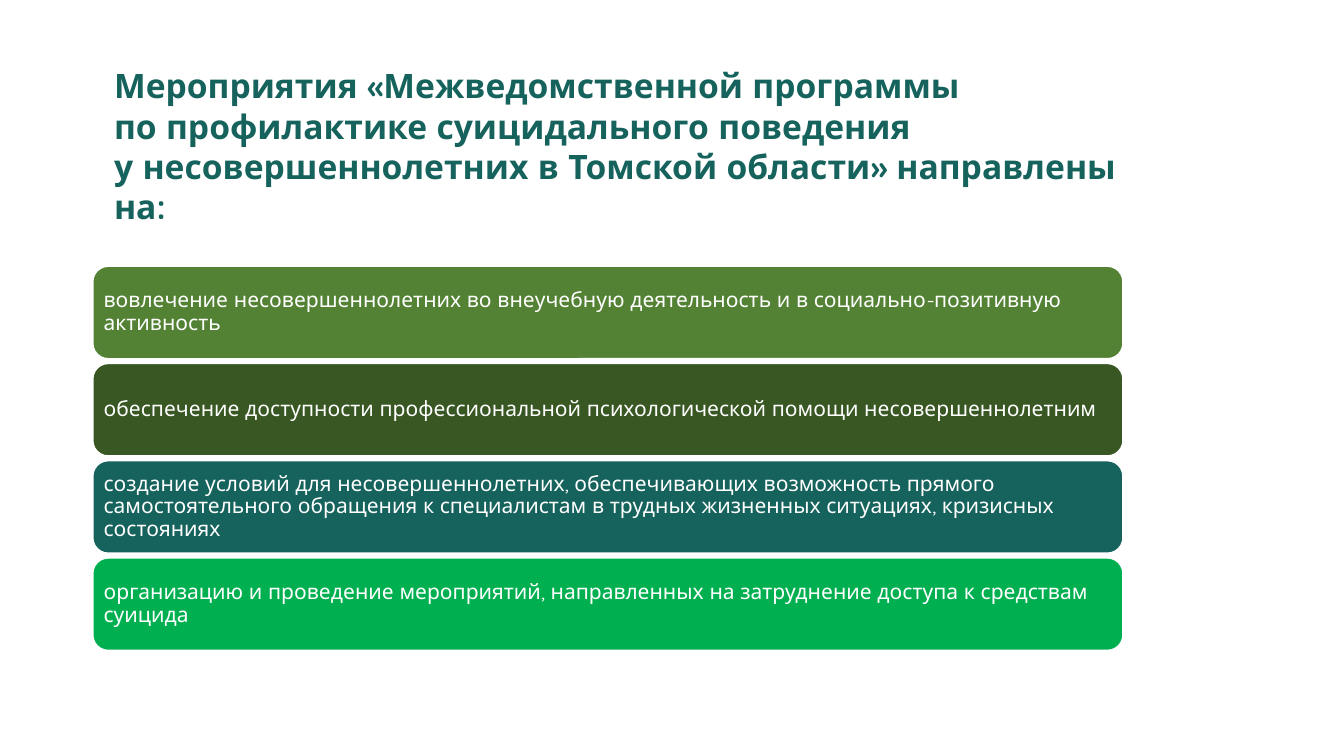
from pptx import Presentation
from pptx.dml.color import RGBColor
from pptx.enum import shapes, text
from pptx.util import Cm, Pt

FONT = "Quicksand"
WHITE = RGBColor(0xFF, 0xFF, 0xFF)
TEAL = RGBColor(0x16, 0x62, 0x5C)
OLIVE = RGBColor(0x54, 0x82, 0x35)
MOSS = RGBColor(0x38, 0x57, 0x23)
GREEN = RGBColor(0x00, 0xB0, 0x50)

TITLE = (
    "Мероприятия «Межведомственной программы\v"
    "по профилактике суицидального поведения\v"
    "у несовершеннолетних в Томской области» направлены на:"
)
GOALS = [
    ("вовлечение несовершеннолетних во внеучебную деятельность "
     "и в социально-позитивную активность", OLIVE),
    ("обеспечение доступности профессиональной психологической помощи "
     "несовершеннолетним", MOSS),
    ("создание условий для несовершеннолетних, обеспечивающих возможность "
     "прямого самостоятельного обращения к специалистам в трудных жизненных "
     "ситуациях, кризисных состояниях", TEAL),
    ("организацию и проведение мероприятий, направленных на затруднение "
     "доступа к средствам суицида", GREEN),
]

LEFT, TOP = Cm(2.34), Cm(6.71)
WIDTH, HEIGHT, GAP = Cm(25.96), Cm(2.33), Cm(0.12)


def write(frame, words, size, color, bold=False, spacing=1.0,
          anchor=text.MSO_ANCHOR.MIDDLE):
    """Fill a text frame with one left-aligned paragraph."""
    frame.word_wrap = True
    frame.vertical_anchor = anchor
    para = frame.paragraphs[0]
    para.text = words
    para.alignment = text.PP_ALIGN.LEFT
    para.line_spacing = spacing
    for run in para.runs:
        font = run.font
        font.name, font.size, font.bold = FONT, Pt(size), bold
        font.color.rgb = color


def add_title(slide):
    title = slide.shapes.title
    title.left, title.top = Cm(2.62), Cm(1.52)
    title.width, title.height = Cm(26.64), Cm(3.33)
    write(title.text_frame, TITLE, 24, TEAL, bold=True,
          anchor=text.MSO_ANCHOR.TOP)
    title.text_frame.auto_size = text.MSO_AUTO_SIZE.SHAPE_TO_FIT_TEXT


def add_card(slide, top, words, color):
    card = slide.shapes.add_shape(
        shapes.MSO_SHAPE.ROUNDED_RECTANGLE, LEFT, top, WIDTH, HEIGHT)
    card.shadow.inherit = False
    card.fill.solid()
    card.fill.fore_color.rgb = color
    card.line.color.rgb = WHITE
    card.line.width = Pt(1)
    frame = card.text_frame
    frame.margin_left = frame.margin_right = Cm(0.16)
    frame.margin_top = frame.margin_bottom = Cm(0.16)
    write(frame, words, 15, WHITE, spacing=0.9)


def main():
    deck = Presentation()
    deck.slide_width, deck.slide_height = Cm(33.87), Cm(19.05)
    slide = deck.slides.add_slide(deck.slide_layouts.get_by_name("Title Only"))
    add_title(slide)
    for row, (words, color) in enumerate(GOALS):
        add_card(slide, TOP + row * (HEIGHT + GAP), words, color)
    deck.save("out.pptx")


if __name__ == "__main__":
    main()
